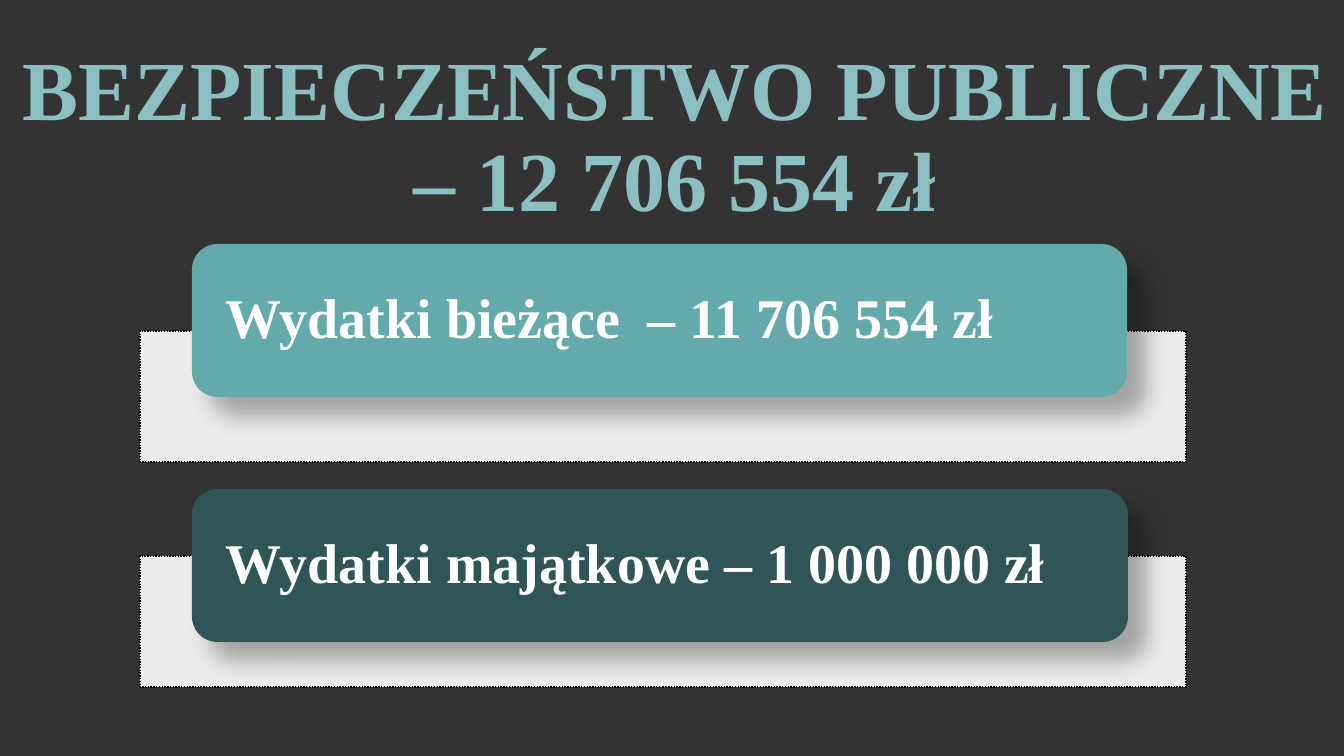
"""Build the public safety budget slide."""
from dataclasses import dataclass

from pptx import Presentation
from pptx.dml.color import RGBColor
from pptx.enum.dml import MSO_LINE
from pptx.enum.shapes import MSO_SHAPE
from pptx.enum.text import MSO_ANCHOR as Anchor, PP_ALIGN as Align
from pptx.oxml import parse_xml
from pptx.oxml.ns import nsdecls, qn
from pptx.shapes.autoshape import Shape
from pptx.slide import Slide
from pptx.util import Emu, Pt

EMU_PER_PX = 914400 / 100.8
FONT = "Times New Roman"
CARD_LEFT, CARD_HEIGHT, LABEL_MARGIN = 192, 153, 7
PANEL_LEFT, PANEL_WIDTH, PANEL_HEIGHT = 140, 1046, 131

SHADOW = (
    f'<a:outerShdw {nsdecls("a")} blurRad="{Pt(15)}" dist="{Pt(18)}" '
    'dir="2700000" algn="tl" rotWithShape="0">'
    '<a:srgbClr val="000000"><a:alpha val="30000"/></a:srgbClr></a:outerShdw>'
)
TITLE_OUTLINE = (
    f'<a:ln {nsdecls("a")} w="{Pt(0.8)}"><a:solidFill>'
    '<a:srgbClr val="0C3A14"/></a:solidFill></a:ln>'
)


@dataclass(frozen=True)
class Box:
    """A rectangle in px."""
    left: int
    top: int
    width: int
    height: int

    def emu(self) -> list[Emu]:
        """Return the four lengths in EMU."""
        return [px(n) for n in (self.left, self.top, self.width, self.height)]

    def inset(self, margin: int) -> "Box":
        """Return the box shrunk on every side."""
        return Box(self.left + margin, self.top + margin,
                   self.width - 2 * margin, self.height - 2 * margin)


@dataclass(frozen=True)
class Expense:
    """A budget line: a coloured card over a pale panel."""
    label: str
    color: str
    card_top: int
    card_width: int
    panel_top: int


EXPENSES = (
    Expense("Wydatki bieżące  – 11 706 554 zł", "64A9AC", 244, 935, 331),
    Expense("Wydatki majątkowe – 1 000 000 zł", "2F5557", 489, 936, 556),
)


def px(length: int) -> Emu:
    """Convert px to EMU."""
    return Emu(round(length * EMU_PER_PX))


def rgb(color: str) -> RGBColor:
    """Convert a hex string to a colour."""
    return RGBColor.from_string(color)


def assign(target: object, values: dict) -> None:
    """Set attributes from a dict of format values."""
    for name, value in values.items():
        setattr(target, name, value)


def add_filled(slide: Slide, kind: MSO_SHAPE, box: Box, color: str) -> Shape:
    """Add a filled shape without a shadow."""
    shape = slide.shapes.add_shape(kind, *box.emu())
    shape.shadow.inherit = False
    shape.fill.solid()
    shape.fill.fore_color.rgb = rgb(color)
    return shape


def add_panel(slide: Slide, box: Box) -> None:
    """Add a translucent white panel with a dotted edge."""
    panel = add_filled(slide, MSO_SHAPE.RECTANGLE, box, "FFFFFF")
    white = panel.element.spPr.find(f"{qn('a:solidFill')}/{qn('a:srgbClr')}")
    white.append(parse_xml(f'<a:alpha {nsdecls("a")} val="90000"/>'))
    panel.line.color.rgb = rgb("000000")
    assign(panel.line, {"width": Pt(1), "dash_style": MSO_LINE.ROUND_DOT})


def add_card(slide: Slide, box: Box, color: str) -> None:
    """Add a rounded card with a soft shadow."""
    card = add_filled(slide, MSO_SHAPE.ROUNDED_RECTANGLE, box, color)
    card.line.fill.background()
    card.element.spPr.find(qn("a:effectLst")).append(parse_xml(SHADOW))


def add_text(slide: Slide, box: Box, text: str, size: int, color: str,
             frame_format: dict, paragraph_format: dict, outline: str = "") -> None:
    """Add a bold one-paragraph text box."""
    frame = slide.shapes.add_textbox(*box.emu()).text_frame
    assign(frame, {"word_wrap": True} | frame_format)
    paragraph = frame.paragraphs[0]
    assign(paragraph, {"line_spacing": 0.9} | paragraph_format)
    run = paragraph.add_run()
    run.text = text
    assign(run.font, {"name": FONT, "size": Pt(size), "bold": True})
    run.font.color.rgb = rgb(color)
    if outline:
        run._r.get_or_add_rPr().insert(0, parse_xml(outline))


def add_expense(slide: Slide, expense: Expense) -> None:
    """Add the panel, card and label of one expense."""
    card = Box(CARD_LEFT, expense.card_top, expense.card_width, CARD_HEIGHT)
    add_panel(slide, Box(PANEL_LEFT, expense.panel_top, PANEL_WIDTH, PANEL_HEIGHT))
    add_card(slide, card, expense.color)
    label_format = {
        "vertical_anchor": Anchor.MIDDLE,
        "margin_left": px(27), "margin_right": px(27),
        "margin_top": 0, "margin_bottom": 0,
    }
    add_text(slide, card.inset(LABEL_MARGIN), expense.label, 40, "FFFFFF",
             label_format, {"alignment": Align.LEFT})


def main() -> None:
    """Build and save the presentation."""
    presentation = Presentation()
    assign(presentation, {"slide_width": px(1344), "slide_height": px(756)})
    slide = presentation.slides.add_slide(presentation.slide_layouts[6])
    slide.background.fill.solid()
    slide.background.fill.fore_color.rgb = rgb("333333")
    for expense in EXPENSES:
        add_expense(slide, expense)
    add_text(slide, Box(6, 43, 1338, 107),
             "BEZPIECZEŃSTWO PUBLICZNE – 12 706 554 zł", 60, "8CBFC2",
             {"vertical_anchor": Anchor.TOP},
             {"alignment": Align.CENTER, "space_before": Pt(10)}, TITLE_OUTLINE)
    presentation.save("out.pptx")


if __name__ == "__main__":
    main()
